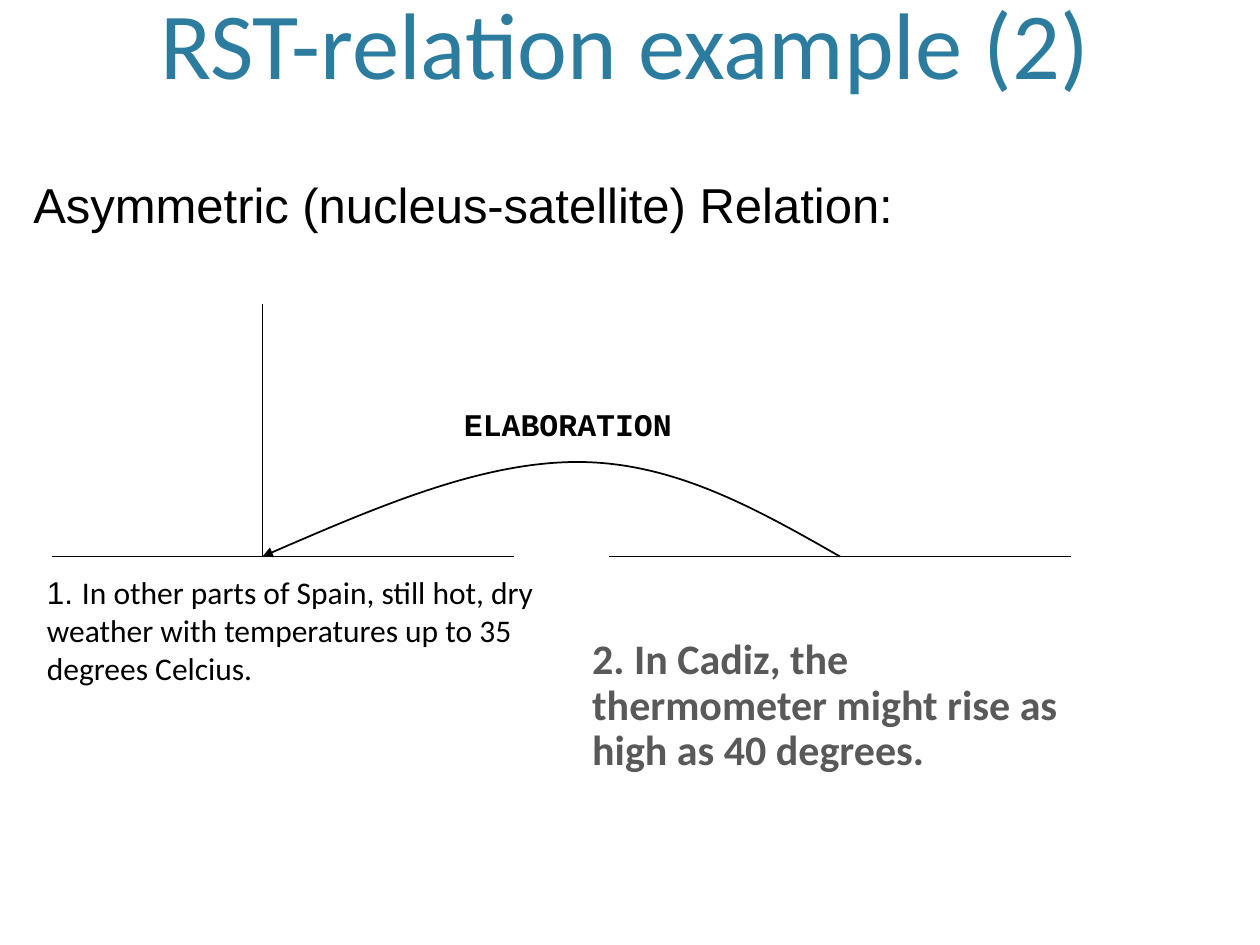
import pptx
import pptx.util
import pptx.dml.color
import pptx.enum.shapes
import pptx.enum.text
import pptx.oxml
import pptx.oxml.ns

PX = 7620
ALIGN = pptx.enum.text.PP_ALIGN
ANCHOR = pptx.enum.text.MSO_ANCHOR
qn = pptx.oxml.ns.qn


def color(code):
    return pptx.dml.color.RGBColor.from_string(code)


def px(*nums):
    return [pptx.util.Emu(n * PX) for n in nums]


def place(shape, box):
    shape.left, shape.top, shape.width, shape.height = px(*box)
    return shape


def textbox(slide, box):
    return slide.shapes.add_textbox(*px(*box))


def write(shape, text, size=18, font="Arial", ink="000000", bold=False,
          align=ALIGN.LEFT, anchor=ANCHOR.TOP, before=0, lines=1.0, indent=0):
    frame = shape.text_frame
    frame.word_wrap = True
    frame.auto_size = pptx.enum.text.MSO_AUTO_SIZE.NONE
    frame.vertical_anchor = anchor
    para = frame.paragraphs[0]
    para.alignment = align
    para.space_before = pptx.util.Pt(before)
    para.line_spacing = lines
    props = para._p.get_or_add_pPr()
    props.set("marL", str(indent * PX))
    props.set("indent", "0")
    props.append(pptx.oxml.parse_xml(
        f'<a:buNone {pptx.oxml.ns.nsdecls("a")}/>'))
    parts = [(text, font)] if isinstance(text, str) else text
    for part, face in parts:
        run = para.add_run()
        run.text = part
        run.font.name = face
        run.font.size = pptx.util.Pt(size)
        run.font.bold = bold
        run.font.color.rgb = color(ink)


def stroke(shape):
    shape.line.color.rgb = color("000000")
    shape.line.width = pptx.util.Pt(1)


def rule(slide, *ends):
    kind = pptx.enum.shapes.MSO_CONNECTOR.STRAIGHT
    line = slide.shapes.add_connector(kind, *px(*ends))
    stroke(line)
    props = line._element.spPr
    props.append(props.makeelement(qn("a:effectLst"), {}))


def curve(slide, start, points):
    build = slide.shapes.build_freeform(*start, scale=PX)
    build.add_line_segments(points, close=False)
    shape = build.convert_to_shape()
    shape.shadow.inherit = False
    shape.fill.background()
    stroke(shape)
    track = next(shape._element.iter(qn("a:path")))
    steps = track.findall(qn("a:lnTo"))
    for i in range(0, len(steps), 3):
        bend = track.makeelement(qn("a:cubicBezTo"), {})
        track.append(bend)
        for step in steps[i:i + 3]:
            bend.append(step[0])
            track.remove(step)
    line = shape.line._get_or_add_ln()
    line.append(line.makeelement(qn("a:headEnd"), {"type": "triangle"}))


def header(slide, box):
    x, y, w, h = box
    write(place(slide.shapes.title, (x, y, w, 80)), "RST-relation example (2)",
          size=54, font="Calibri", ink="2C7C9F",
          align=ALIGN.CENTER, anchor=ANCHOR.BOTTOM)
    write(textbox(slide, (x, y + 140, 1060, 68)),
          "Asymmetric (nucleus-satellite) Relation:", size=28, before=14)


def diagram(slide, box):
    x, y, w, h = box
    base, span = y + h, 440
    right = x + w - span
    for left in (x, right):
        rule(slide, left, base, left + span, base)
    stem = x + 200
    rule(slide, stem, y, stem, base)
    end, mid, top = right + span // 2, stem + 300, base - 90
    curve(slide, (stem, base), [
        (stem + 104, base - 45), (mid - 92, top), (mid, top),
        (mid + 92, top), (end - 79, base - 45), (end, base)])
    write(textbox(slide, (x + 380, y + 90, 310, 60)), "ELABORATION",
          font="Courier New", bold=True, before=9)


def units(slide, box):
    x, y, w, h = box
    write(textbox(slide, (x, y, 530, 220)),
          [("1. ", "Arial"),
           ("In other parts of Spain, still hot, dry weather with "
            "temperatures up to 35 degrees Celcius.", "Calibri")],
          before=4, indent=13)
    body = place(slide.placeholders[1], (x + w - 498, y + 62, 498, 199))
    write(body, "2. In Cadiz, the thermometer might rise as high as 40 degrees.",
          size=24, font="Calibri", ink="595959", bold=True,
          before=20, lines=0.9, indent=13)


def main():
    deck = pptx.Presentation()
    deck.slide_width, deck.slide_height = px(1200, 900)
    slide = deck.slides.add_slide(deck.slide_layouts[1])
    header(slide, (20, 20, 1150, 208))
    diagram(slide, (50, 290, 970, 240))
    units(slide, (20, 540, 1017, 261))
    deck.save("out.pptx")


if __name__ == "__main__":
    main()
